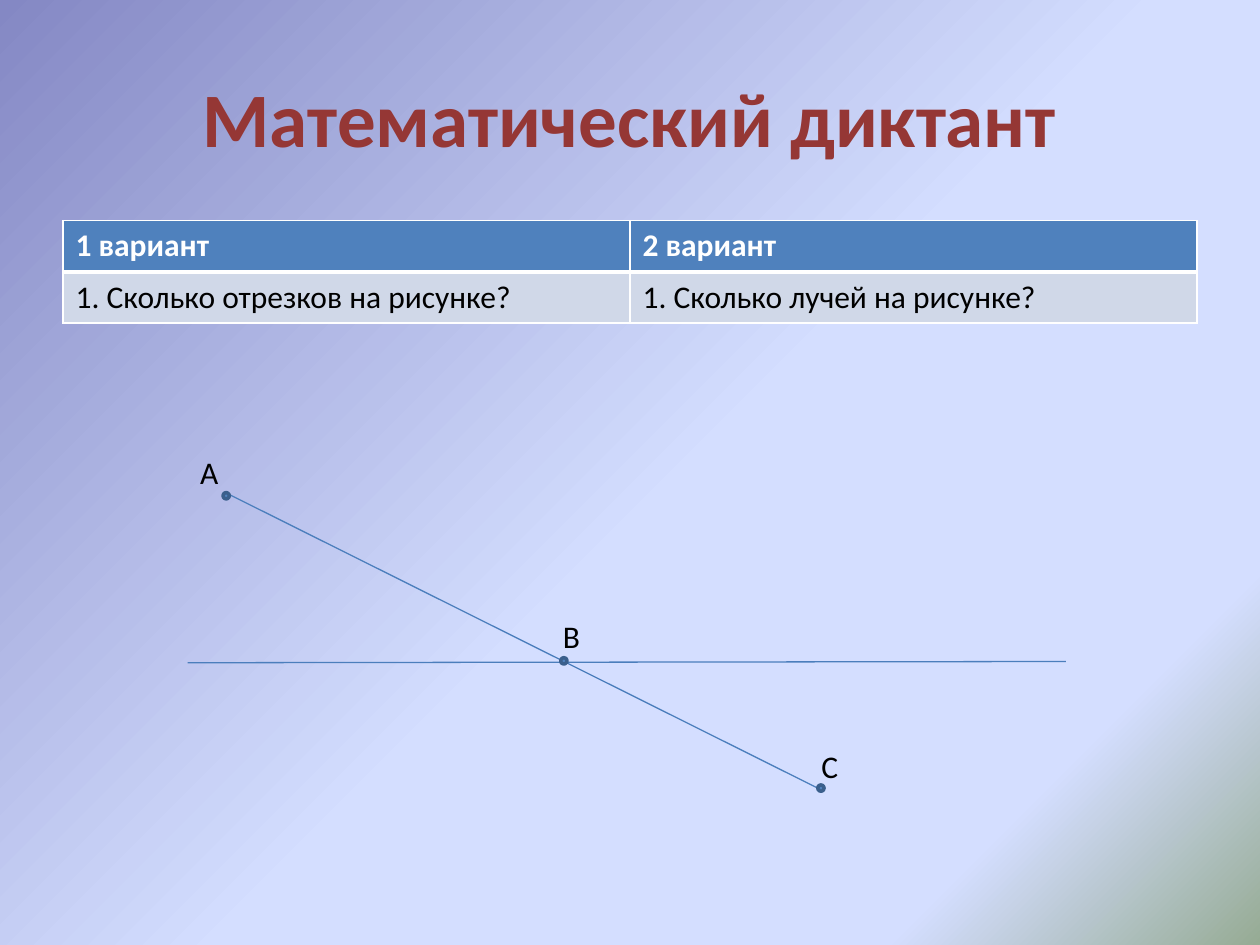
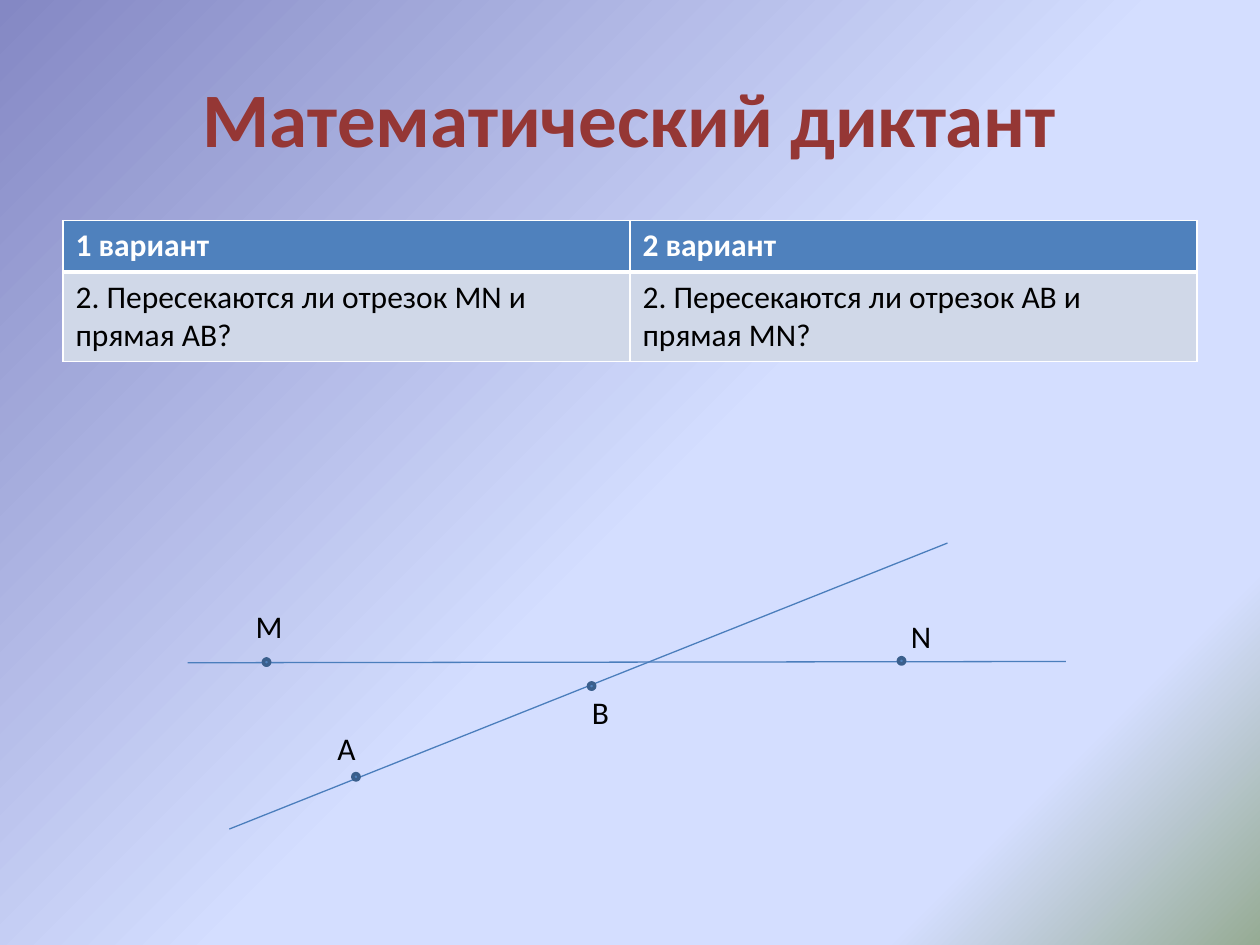
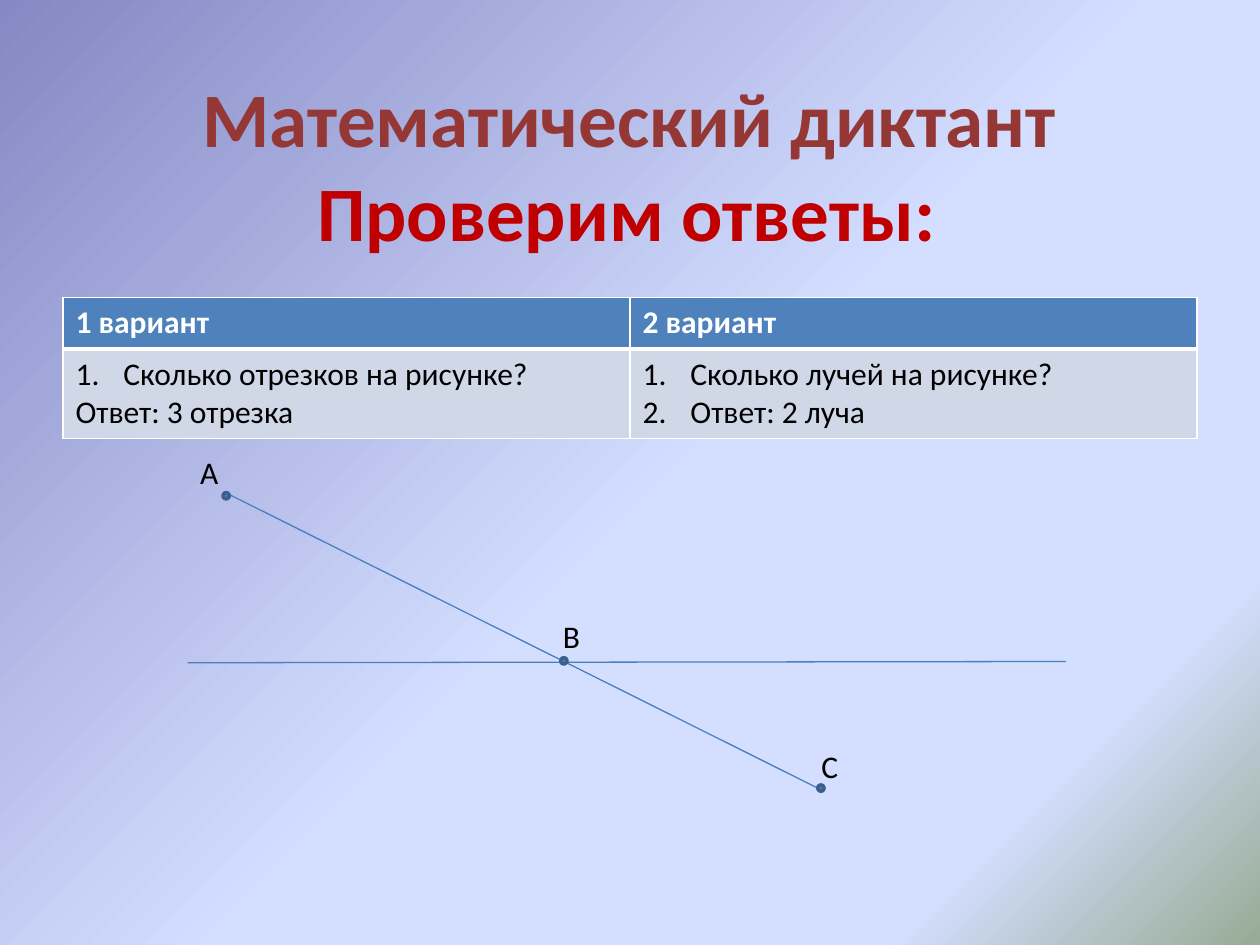
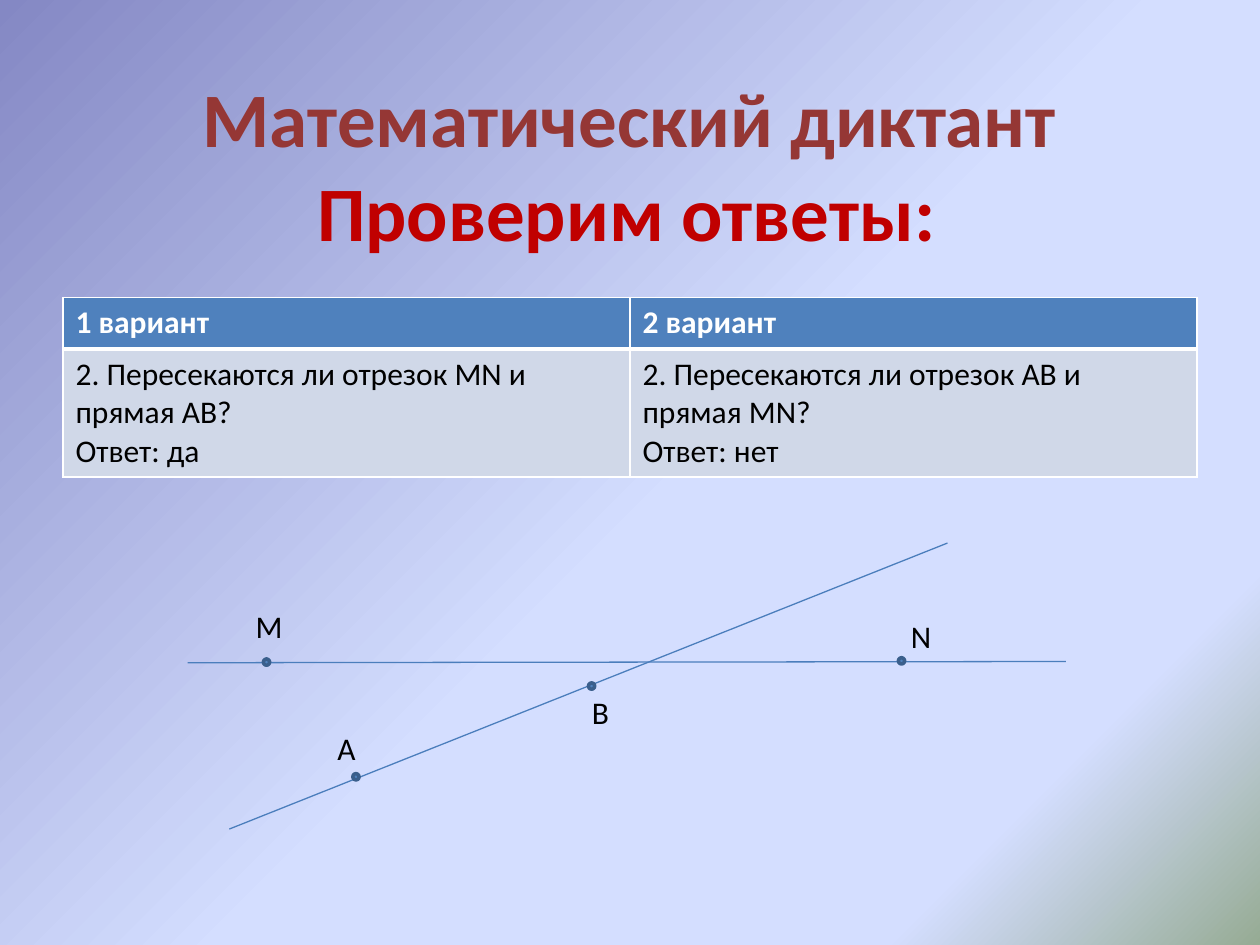
from lxml.etree import SubElement
from pptx import Presentation
from pptx.dml.color import RGBColor
from pptx.enum.shapes import MSO_CONNECTOR, MSO_SHAPE
from pptx.enum.text import MSO_ANCHOR, MSO_AUTO_SIZE, PP_ALIGN
from pptx.oxml.ns import qn
from pptx.util import Inches, Pt

COLORS = {
    "title": "953735",
    "subtitle": "C00000",
    "text": "000000",
    "white": "FFFFFF",
    "header": "4F81BD",
    "body": "D0D8E8",
    "line": "4B7EBC",
    "dot": "4F81BD",
    "dot_outline": "3A5F8C",
}
BACKGROUND_STOPS = [(0, "8488C4"), (53, "D4DEFF"), (83, "D4DEFF"), (100, "96AB94")]
FONT = "Calibri"
DOT_SIZE = 0.05
HEADER_HEIGHT = 0.41
LINE_HEIGHT = 0.3

HORIZONTAL_LINE = (1.49, 5.26, 8.46, 5.25)

# Dots are given by left and top, labels by text, left, top and width.
RAYS_DRAWING = {
    "lines": [(1.79, 3.91, 6.52, 6.27), HORIZONTAL_LINE],
    "dots": [(1.77, 3.91), (6.49, 6.23), (4.45, 5.22)],
    "labels": [("А", 1.49, 3.55, 0.24), ("В", 4.37, 4.85, 0.24), ("С", 6.42, 5.88, 0.39)],
}
CROSSING_DRAWING = {
    "lines": [(1.82, 6.58, 7.52, 4.31), HORIZONTAL_LINE],
    "dots": [(2.8, 6.14), (4.67, 5.42), (2.09, 5.23), (7.13, 5.22)],
    "labels": [("А", 2.58, 5.74, 0.24), ("В", 4.6, 5.45, 0.24),
               ("M", 1.93, 4.77, 0.31), ("N", 7.13, 4.85, 0.31)],
}

SEGMENTS_QUESTION = "Сколько отрезков на рисунке?"
RAYS_QUESTION = "Сколько лучей на рисунке?"
CROSSING_QUESTIONS = ("2. Пересекаются ли отрезок MN и прямая AB?",
                      "2. Пересекаются ли отрезок AB и прямая MN?")


def color(name):
    return RGBColor.from_string(COLORS[name])


def set_background(master):
    fill = master.background.fill
    fill.gradient()
    fill.gradient_angle = 315
    stops = master.element.find(".//" + qn("a:gsLst"))
    for stop in list(stops):
        stops.remove(stop)
    for percent, value in BACKGROUND_STOPS:
        stop = SubElement(stops, qn("a:gs"), pos=str(percent * 1000))
        SubElement(stop, qn("a:srgbClr"), val=value)


def format_paragraph(paragraph, size, color_name, bold=False, alignment=PP_ALIGN.LEFT):
    paragraph.alignment = alignment
    paragraph.font.name = FONT
    paragraph.font.size = Pt(size)
    paragraph.font.bold = bold
    paragraph.font.color.rgb = color(color_name)


def set_title(slide):
    title = slide.shapes.title
    title.left, title.top = Inches(0.5), Inches(0.3)
    title.width, title.height = Inches(9), Inches(1.25)
    title.text_frame.text = "Математический диктант"
    title.text_frame.vertical_anchor = MSO_ANCHOR.MIDDLE
    format_paragraph(title.text_frame.paragraphs[0], 44, "title", True, PP_ALIGN.CENTER)


def add_text(slide, text, left, top, width, height, *style):
    box = slide.shapes.add_textbox(Inches(left), Inches(top), Inches(width), Inches(height))
    frame = box.text_frame
    frame.word_wrap = True
    frame.auto_size = MSO_AUTO_SIZE.SHAPE_TO_FIT_TEXT
    frame.text = text
    format_paragraph(frame.paragraphs[0], *style)


def number_paragraph(paragraph):
    properties = paragraph._p.get_or_add_pPr()
    properties.set("marL", str(Inches(0.38)))
    properties.set("indent", str(-Inches(0.38)))
    SubElement(properties, qn("a:buFont"), typeface="+mj-lt")
    # Character properties must follow the bullet in the schema order.
    SubElement(properties, qn("a:buAutoNum"), type="arabicPeriod")
    defaults = properties.find(qn("a:defRPr"))
    if defaults is not None:
        properties.append(defaults)


def set_borders(cell, bottom):
    properties = cell._tc.get_or_add_tcPr()
    for side, width in (("L", 1), ("R", 1), ("T", 1), ("B", bottom)):
        border = SubElement(properties, qn("a:ln" + side), w=str(Pt(width)))
        fill = SubElement(border, qn("a:solidFill"))
        SubElement(fill, qn("a:srgbClr"), val=COLORS["white"])


def fill_cell(cell, lines, numbered, fill_name, text_color, bold, bottom):
    """Write lines into the cell, the first `numbered` of them as a list."""
    set_borders(cell, bottom)
    cell.fill.solid()
    cell.fill.fore_color.rgb = color(fill_name)
    cell.text_frame.text = "\n".join(lines)
    for index, paragraph in enumerate(cell.text_frame.paragraphs):
        format_paragraph(paragraph, 18, text_color, bold)
        if index < numbered:
            number_paragraph(paragraph)


def add_variants_table(slide, top, variants, line_count, numbered=(0, 0)):
    body_height = 0.4 + LINE_HEIGHT * (line_count - 1)
    table = slide.shapes.add_table(
        2, 2, Inches(0.5), Inches(top), Inches(9), Inches(HEADER_HEIGHT + body_height)
    ).table
    table.rows[0].height = Inches(HEADER_HEIGHT)
    table.rows[1].height = Inches(body_height)
    for column, lines in enumerate(variants):
        fill_cell(table.cell(0, column), [f"{column + 1} вариант"], 0,
                  "header", "white", True, 3)
        fill_cell(table.cell(1, column), lines, numbered[column],
                  "body", "text", False, 1)
    for column in range(2):
        top_border = table.cell(1, column)._tc.tcPr.find(qn("a:lnT"))
        top_border.set("w", str(Pt(3)))


def add_line(slide, *ends):
    connector = slide.shapes.add_connector(MSO_CONNECTOR.STRAIGHT, *map(Inches, ends))
    connector.line.color.rgb = color("line")
    connector.line.width = Pt(0.75)
    SubElement(connector._element.spPr, qn("a:effectLst"))


def add_dot(slide, left, top):
    dot = slide.shapes.add_shape(MSO_SHAPE.OVAL, Inches(left), Inches(top),
                                 Inches(DOT_SIZE), Inches(DOT_SIZE))
    dot.shadow.inherit = False
    dot.fill.solid()
    dot.fill.fore_color.rgb = color("dot")
    dot.line.color.rgb = color("dot_outline")
    dot.line.width = Pt(2)


def add_drawing(slide, drawing):
    for ends in drawing["lines"]:
        add_line(slide, *ends)
    for position in drawing["dots"]:
        add_dot(slide, *position)
    for text, left, top, width in drawing["labels"]:
        add_text(slide, text, left, top, width, 0.4, 18, "text")


def add_dictation_slide(presentation):
    slide = presentation.slides.add_slide(presentation.slide_layouts[5])
    set_title(slide)
    return slide


def add_question_slide(presentation, questions, line_count, drawing):
    slide = add_dictation_slide(presentation)
    add_variants_table(slide, 1.75, [[question] for question in questions], line_count)
    add_drawing(slide, drawing)


def add_answer_slide(presentation, variants, line_count, drawing, numbered=(0, 0)):
    slide = add_dictation_slide(presentation)
    add_variants_table(slide, 2.36, variants, line_count, numbered)
    add_text(slide, "Проверим ответы:", 1.04, 1.26, 7.87, 0.84,
             44, "subtitle", True, PP_ALIGN.CENTER)
    add_drawing(slide, drawing)


def main():
    presentation = Presentation()
    presentation.slide_width = Inches(10)
    presentation.slide_height = Inches(7.5)
    set_background(presentation.slide_master)

    add_question_slide(presentation, (f"1. {SEGMENTS_QUESTION}", f"1. {RAYS_QUESTION}"),
                       1, RAYS_DRAWING)
    add_question_slide(presentation, CROSSING_QUESTIONS, 2, CROSSING_DRAWING)
    add_answer_slide(presentation,
                     [[SEGMENTS_QUESTION, "Ответ: 3 отрезка"], [RAYS_QUESTION, "Ответ: 2 луча"]],
                     2, RAYS_DRAWING, numbered=(1, 2))
    answers = ("Ответ: да", "Ответ: нет")
    add_answer_slide(presentation, list(zip(CROSSING_QUESTIONS, answers)),
                     3, CROSSING_DRAWING)

    presentation.save("out.pptx")


if __name__ == "__main__":
    main()
